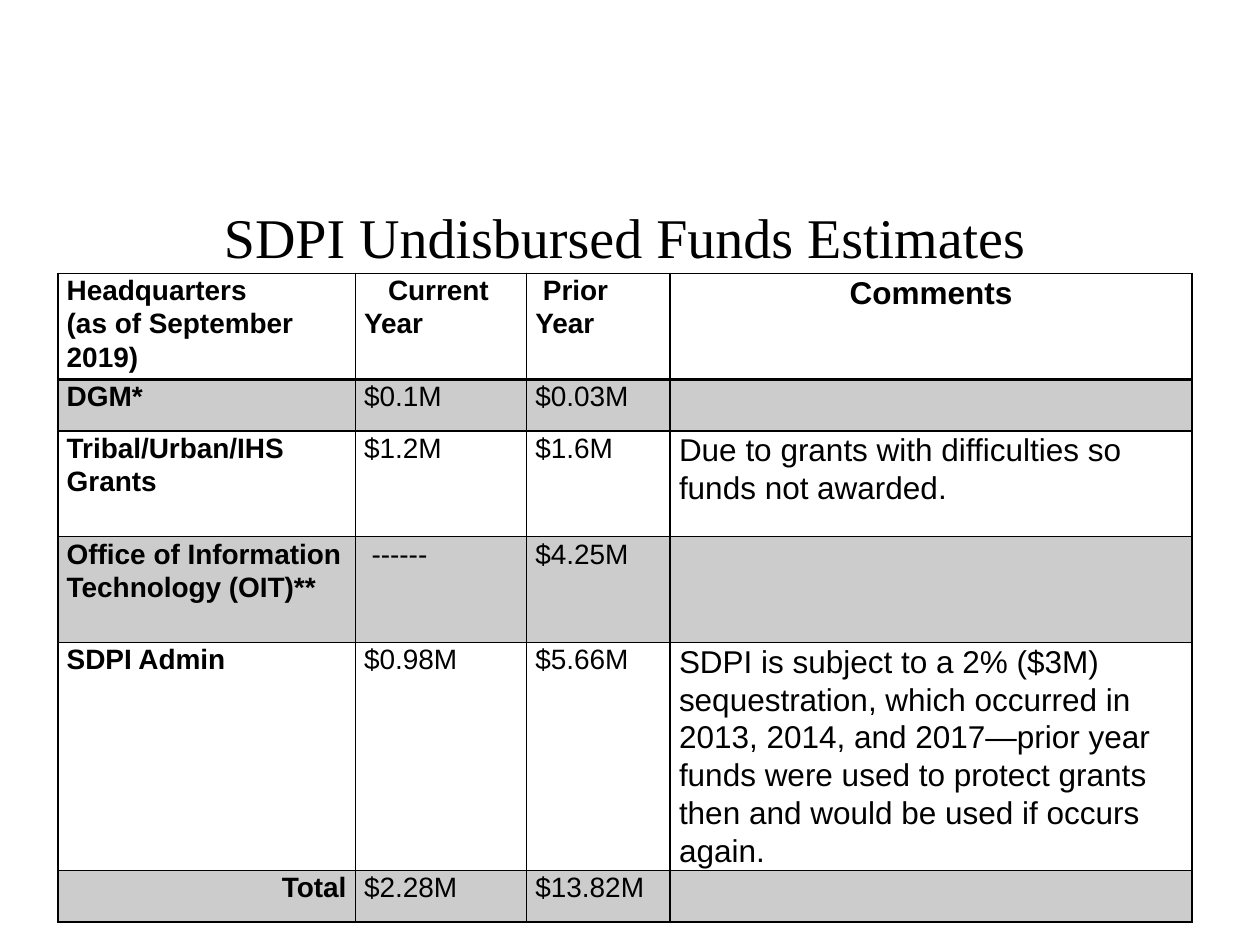
from lxml import etree
from pptx import Presentation
from pptx.dml.color import RGBColor
from pptx.enum.text import MSO_ANCHOR, PP_ALIGN
from pptx.oxml.ns import qn
from pptx.util import Inches, Pt

LEFT, CENTER, RIGHT = PP_ALIGN.LEFT, PP_ALIGN.CENTER, PP_ALIGN.RIGHT
MIDDLE = MSO_ANCHOR.MIDDLE
TITLE_ONLY = 5
COLORS = {"ink": "000000"}
SHADE = 20  # percent of ink in shaded rows

# Content
TITLE = "SDPI Undisbursed Funds Estimates"
ROWS = [
    ("Headquarters\n(as of September 2019)", "Current Year", "Prior Year", "Comments"),
    ("DGM*", "$0.1M", "$0.03M", ""),
    ("Tribal/Urban/IHS Grants", "$1.2M", "$1.6M",
     "Due to grants with difficulties so funds not awarded."),
    ("Office of Information Technology (OIT)**", "------", "$4.25M", ""),
    ("SDPI Admin", "$0.98M", "$5.66M",
     "SDPI is subject to a 2% ($3M) sequestration, which occurred in 2013, 2014, "
     "and 2017—prior year funds were used to protect grants then and would be "
     "used if occurs again."),
    ("Total", "$2.28M", "$13.82M", ""),
]
WIDTHS = [2.36, 1.36, 1.14, 4.14]
HEIGHTS = [0.84, 0.41, 0.84, 0.84, 1.81, 0.41]
ALIGNS = {(0, 3): CENTER, (5, 0): RIGHT}
INDENTS = {(0, 1): 0.19, (0, 2): 0.06, (3, 1): 0.06}  # first line, inches


def write(frame, text, size=16, font="Arial", bold=False, align=LEFT,
          space=None, indent=0):
    frame.word_wrap = True
    frame.text = text
    for para in frame.paragraphs:
        para.alignment = align
        para.line_spacing = space
        if indent:
            para._p.get_or_add_pPr().set("indent", str(Inches(indent)))
        for face in [para.font] + [run.font for run in para.runs]:
            face.size, face.name, face.bold = Pt(size), font, bold
            face.color.rgb = RGBColor.from_string(COLORS["ink"])


def shade(cell):
    cell.fill.solid()
    cell.fill.fore_color.rgb = RGBColor.from_string(COLORS["ink"])
    color = cell._tc.tcPr.find(".//" + qn("a:srgbClr"))
    etree.SubElement(color, qn("a:alpha"), val=str(SHADE * 1000))


def border(cell, **widths):
    props = cell._tc.get_or_add_tcPr()
    for spot, side in enumerate("LRTB"):
        line = etree.Element(qn("a:ln" + side), w=str(Pt(widths.get(side, 1))))
        fill = etree.SubElement(line, qn("a:solidFill"))
        etree.SubElement(fill, qn("a:srgbClr"), val=COLORS["ink"])
        props.insert(spot, line)


deck = Presentation()
deck.slide_width, deck.slide_height = Inches(10), Inches(7.5)
slide = deck.slides.add_slide(deck.slide_layouts[TITLE_ONLY])

# Title
title = slide.shapes.title
title.left, title.top = Inches(0.46), Inches(1.25)
title.width, title.height = Inches(9), Inches(1.25)
write(title.text_frame, TITLE, size=32, font="Times New Roman", align=CENTER)
title.text_frame.vertical_anchor = MIDDLE

# Funds table
table = slide.shapes.add_table(
    len(ROWS), len(WIDTHS), Inches(0.46), Inches(2.17),
    Inches(sum(WIDTHS)), Inches(sum(HEIGHTS))).table
table.first_row = table.horz_banding = False
for col, width in zip(table.columns, WIDTHS):
    col.width = Inches(width)
for row, height in zip(table.rows, HEIGHTS):
    row.height = Inches(height)

for r, texts in enumerate(ROWS):
    for c, text in enumerate(texts):
        cell = table.cell(r, c)
        cell.margin_left = cell.margin_right = Inches(0.07)
        cell.margin_top = cell.margin_bottom = 0
        write(cell.text_frame, text, size=18 if c == 3 else 16,
              bold=r == 0 or c == 0, align=ALIGNS.get((r, c), LEFT),
              space=1.07, indent=INDENTS.get((r, c), 0))
        if r % 2:
            shade(cell)
        else:
            cell.fill.background()
        # Heavier rule under the header row
        border(cell, T=2 if r == 1 else 1, B=2 if r == 0 else 1)

deck.save("out.pptx")
